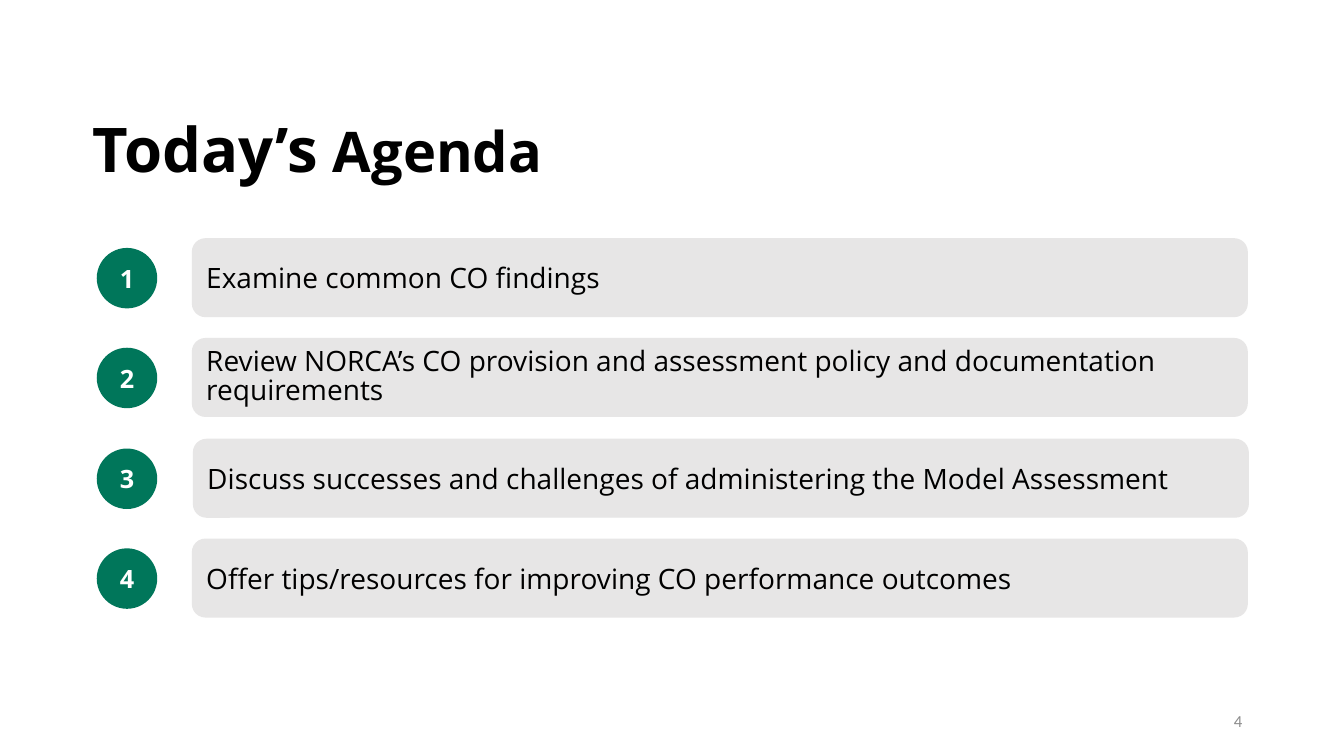
import pptx
import pptx.util
import pptx.dml.color
import pptx.enum.shapes
import pptx.enum.text

RGBColor = pptx.dml.color.RGBColor
MSO_SHAPE = pptx.enum.shapes.MSO_SHAPE
MSO_ANCHOR = pptx.enum.text.MSO_ANCHOR
PP_ALIGN = pptx.enum.text.PP_ALIGN

BLACK = RGBColor(0x00, 0x00, 0x00)
WHITE = RGBColor(0xFF, 0xFF, 0xFF)
GREEN = RGBColor(0x00, 0x76, 0x5A)
LIGHT_GRAY = RGBColor(0xE7, 0xE6, 0xE6)
NUMBER_GRAY = RGBColor(0x8C, 0x8C, 0x8C)

EMU_PER_PX = 9144
FIRST_ROW_TOP = 237
ROW_PITCH = 99.4

AGENDA = [
    ("Examine common CO findings", 191, 1.0),
    ("Review NORCA’s CO provision and assessment policy and documentation requirements", 191, 0.87),
    ("Discuss successes and challenges of administering the Model Assessment", 192, 1.0),
    ("Offer tips/resources for improving CO performance outcomes", 191, 1.0),
]


def px(n):
    return pptx.util.Emu(n * EMU_PER_PX)


def add_run(p, text, size, color, bold=False, font="Open Sans"):
    r = p.add_run()
    r.text = text
    r.font.name = font
    r.font.size = pptx.util.Pt(size)
    r.font.bold = bold
    r.font.color.rgb = color


def format_frame(tf, anchor, align, spacing=1.0):
    tf.word_wrap = True
    tf.vertical_anchor = anchor
    p = tf.paragraphs[0]
    p.alignment = align
    p.line_spacing = spacing
    return p


def add_title(s):
    sp = s.shapes.title
    sp.left, sp.top, sp.width, sp.height = px(82), px(113), px(728), px(84)
    p = format_frame(sp.text_frame, MSO_ANCHOR.TOP, PP_ALIGN.LEFT, 0.9)
    add_run(p, "Today’s", 44, BLACK, bold=True)
    add_run(p, " Agenda", 40, BLACK, bold=True)


def add_filled_shape(s, kind, left, top, width, height, color):
    sp = s.shapes.add_shape(kind, px(left), px(top), px(width), px(height))
    sp.shadow.inherit = False
    sp.fill.solid()
    sp.fill.fore_color.rgb = color
    return sp


def add_badge(s, number, top):
    sp = add_filled_shape(s, MSO_SHAPE.OVAL, 96, top, 60, 60, GREEN)
    sp.line.fill.background()
    p = format_frame(sp.text_frame, MSO_ANCHOR.MIDDLE, PP_ALIGN.CENTER)
    add_run(p, str(number), 18, WHITE, bold=True)


def add_agenda_bar(s, text, left, top, spacing):
    sp = add_filled_shape(s, MSO_SHAPE.ROUNDED_RECTANGLE, left, top, 1046, 77, LIGHT_GRAY)
    sp.line.color.rgb = LIGHT_GRAY
    sp.line.width = pptx.util.Pt(1)
    p = format_frame(sp.text_frame, MSO_ANCHOR.MIDDLE, PP_ALIGN.LEFT, spacing)
    add_run(p, text, 20, BLACK)


def add_slide_number(s, number):
    sp = s.shapes.add_textbox(px(942), px(695), px(300), px(40))
    p = format_frame(sp.text_frame, MSO_ANCHOR.MIDDLE, PP_ALIGN.RIGHT)
    add_run(p, str(number), 12, NUMBER_GRAY, font="Calibri")


def main():
    prs = pptx.Presentation()
    prs.slide_width, prs.slide_height = px(1333), px(750)
    s = prs.slides.add_slide(prs.slide_layouts[5])
    add_title(s)
    for i, (text, left, spacing) in enumerate(AGENDA):
        top = FIRST_ROW_TOP + round(i * ROW_PITCH)
        add_badge(s, i + 1, top + 9)
        add_agenda_bar(s, text, left, top, spacing)
    add_slide_number(s, 4)
    prs.save("out.pptx")


if __name__ == "__main__":
    main()
